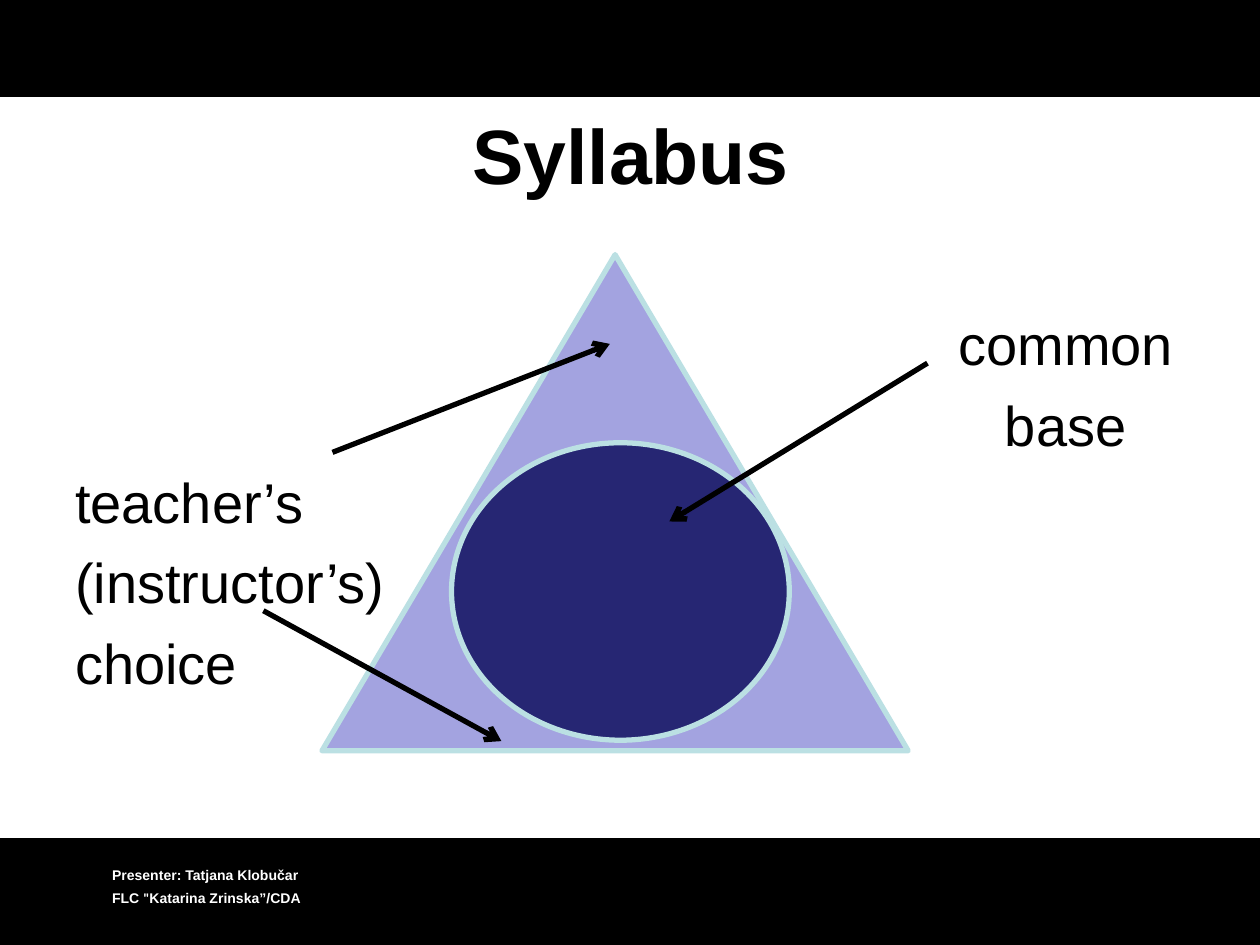
from pptx import Presentation
from pptx.dml.color import RGBColor
from pptx.enum import shapes, text
from pptx.oxml.ns import qn
from pptx.util import Pt
from lxml import etree

KINDS = shapes.MSO_SHAPE
ALIGN = text.PP_ALIGN


def tint(code):
    return RGBColor.from_string(code)


def style(item, **looks):
    color = looks.pop("color", None)
    for key, value in looks.items():
        setattr(item, key, value)
    if color:
        item.color.rgb = tint(color)


def add_form(slide, kind, box, fill, edge, width):
    form = slide.shapes.add_shape(kind, *map(Pt, box))
    form.shadow.inherit = False
    form.fill.solid()
    form.fill.fore_color.rgb = tint(fill)
    style(form.line, color=edge, width=Pt(width))


def add_arrow(slide, start, end):
    arrow = slide.shapes.add_connector(
        shapes.MSO_CONNECTOR.STRAIGHT, *map(Pt, start + end))
    style(arrow.line, color="000000", width=Pt(3))
    line = arrow.line._get_or_add_ln()
    etree.SubElement(line, qn("a:tailEnd"), type="arrow")
    etree.SubElement(arrow._element.spPr, qn("a:effectLst"))


def add_label(slide, box, lines, gap, align=ALIGN.LEFT, space=1.0, **font):
    frame = slide.shapes.add_textbox(*map(Pt, box)).text_frame
    style(frame, word_wrap=True, margin_left=0, margin_right=0,
          margin_top=0, margin_bottom=0)
    for i, runs in enumerate(lines):
        para = frame.paragraphs[0] if i == 0 else frame.add_paragraph()
        style(para, alignment=align, line_spacing=space,
              space_before=Pt(gap if i else 0))
        for words, face in runs:
            run = para.add_run()
            run.text = words
            style(run.font, name=face, **font)


def add_title(slide, words, box):
    title = slide.shapes.title
    sides = zip(("left", "top", "width", "height"), map(Pt, box))
    style(title, **dict(sides))
    frame = title.text_frame
    frame.text = words
    style(frame, vertical_anchor=text.MSO_ANCHOR.MIDDLE)
    para = frame.paragraphs[0]
    style(para, alignment=ALIGN.CENTER)
    style(para.runs[0].font, name="Arial", size=Pt(44), bold=True,
          color="000000")


def main():
    deck = Presentation()
    style(deck, slide_width=Pt(720), slide_height=Pt(540))
    slide = deck.slides.add_slide(deck.slide_layouts[5])

    for box in ((0, 479.5, 720, 60.5), (0, -2, 723, 57)):
        add_form(slide, KINDS.RECTANGLE, box, "000000", "000000", 0.75)
    add_label(slide, (64, 496.5, 212, 24),
              [[("Presenter: Tatjana Klobučar", "Arial")],
               [("FLC ", "Arial"), ('"', "Calibri"),
                ("Katarina Zrinska”/CDA", "Arial")]],
              4.2, space=0.9, size=Pt(8), bold=True, color="FFFFFF")

    add_title(slide, "Syllabus", (36.5, 43, 648, 90))
    body = {"size": Pt(32), "color": "000000"}
    add_label(slide, (539, 177, 140, 82),
              [[(word, "Arial")] for word in ("common", "base")],
              7.6, ALIGN.CENTER, **body)
    add_label(slide, (43, 267, 200, 126),
              [[(word, "Arial")]
               for word in ("teacher’s", "(instructor’s)", "choice")],
              7.6, **body)

    add_form(slide, KINDS.ISOSCELES_TRIANGLE, (184, 145.5, 335, 283.5),
             "A3A3E0", "BBE0E3", 3)
    add_form(slide, KINDS.OVAL, (258, 253, 193, 170),
             "262673", "BBE0E3", 3)
    for start, end in (((190, 258.5), (348.5, 196.5)),
                       ((150.5, 349), (286.5, 423.5)),
                       ((530, 207.5), (382.5, 298))):
        add_arrow(slide, start, end)

    deck.save("out.pptx")


if __name__ == "__main__":
    main()
